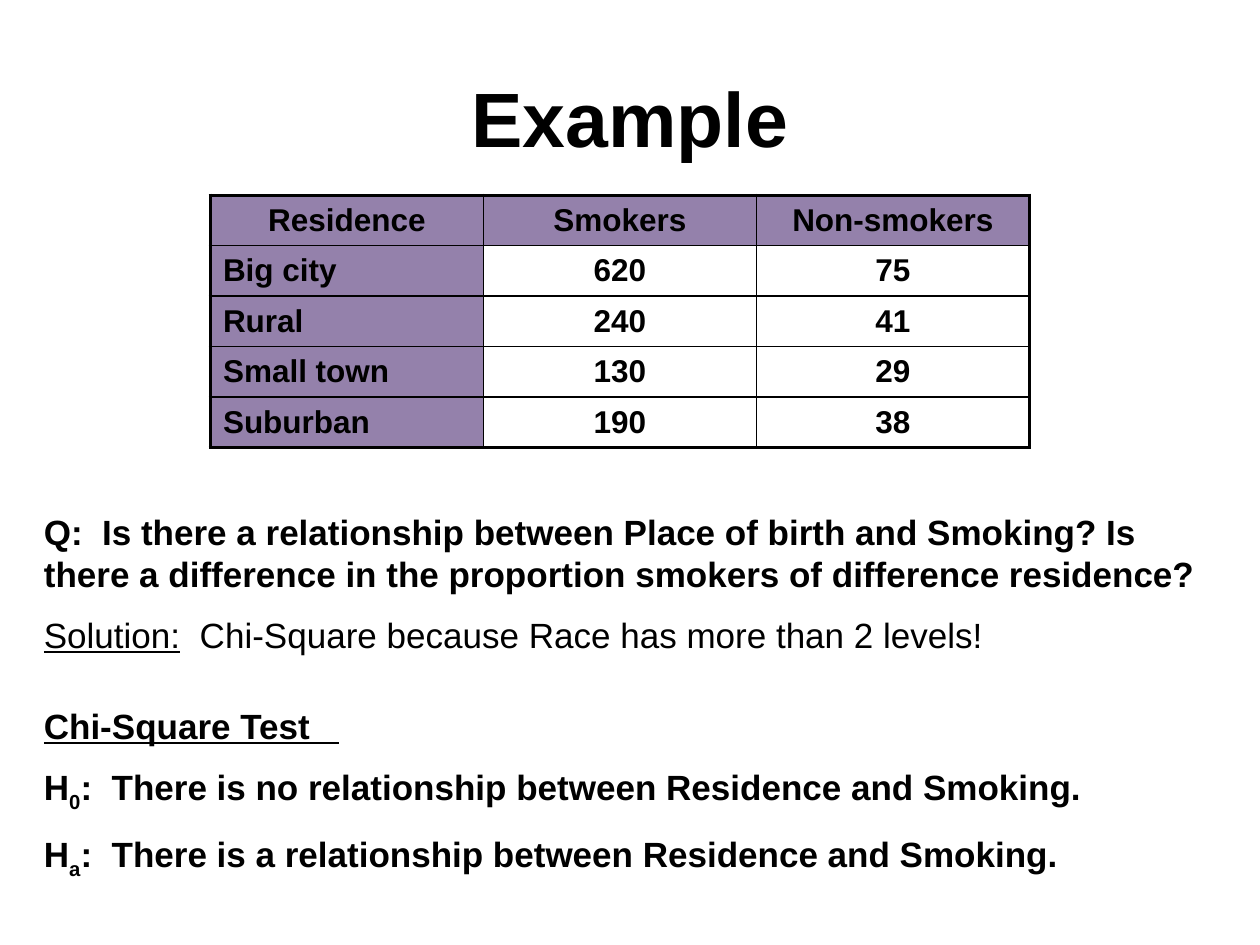
from pptx import Presentation, util as u
from pptx.dml import color
from pptx.enum import text as t
from pptx.oxml import ns
from lxml import etree

COLORS = {"ink": "000000", "header": "9481AB", "paper": "FFFFFF"}


def write(paragraph, text, size=20, bold=True, underline=False, subscript=False):
    run = paragraph.add_run()
    run.text = text
    font = run.font
    font.name = "Arial"
    font.size = u.Pt(size)
    font.bold = bold
    font.underline = underline
    font.color.rgb = color.RGBColor.from_string(COLORS["ink"])
    if subscript:
        run._r.get_or_add_rPr().set("baseline", "-25000")


def set_borders(cell, widths):
    properties = cell._tc.get_or_add_tcPr()
    for index, (side, width) in enumerate(widths.items()):
        line = etree.Element(ns.qn(f"a:ln{side}"), w=str(u.Pt(width)))
        fill = etree.SubElement(line, ns.qn("a:solidFill"))
        etree.SubElement(fill, ns.qn("a:srgbClr"), val=COLORS["ink"])
        properties.insert(index, line)


presentation = Presentation()
presentation.slide_width = u.Inches(10)
presentation.slide_height = u.Inches(7.5)
slide = presentation.slides.add_slide(presentation.slide_layouts[6])

rows = [
    ("Residence", "Smokers", "Non-smokers"),
    ("Big city", "620", "75"),
    ("Rural", "240", "41"),
    ("Small town", "130", "29"),
    ("Suburban", "190", "38"),
]
last_row, last_column = len(rows) - 1, len(rows[0]) - 1
table = slide.shapes.add_table(
    len(rows), len(rows[0]), u.Inches(1.67), u.Inches(1.55), u.Inches(6.5), u.Inches(2)
).table
for row_index, row in enumerate(rows):
    for column_index, value in enumerate(row):
        cell = table.cell(row_index, column_index)
        is_header = row_index == 0 or column_index == 0
        cell.fill.solid()
        cell.fill.fore_color.rgb = color.RGBColor.from_string(
            COLORS["header" if is_header else "paper"]
        )
        cell.vertical_anchor = t.MSO_ANCHOR.MIDDLE
        set_borders(cell, {
            "L": 2.25 if column_index == 0 else 1,
            "R": 2.25 if column_index == last_column else 1,
            "T": 2.25 if row_index == 0 else 1,
            "B": 2.25 if row_index == last_row else 1,
        })
        paragraph = cell.text_frame.paragraphs[0]
        is_label = column_index == 0 and row_index > 0
        paragraph.alignment = t.PP_ALIGN.LEFT if is_label else t.PP_ALIGN.CENTER
        write(paragraph, value, size=18)

body = slide.shapes.add_textbox(
    u.Inches(0.25), u.Inches(4), u.Inches(9.5), u.Inches(3.02)
).text_frame
body.word_wrap = True
body_paragraphs = [
    (0, [("Q:  Is there a relationship between Place of birth and Smoking? "
          "Is there a difference in the proportion smokers of difference residence?", {})]),
    (11, [("Solution:", {"bold": False, "underline": True}),
          ("  Chi-Square because Race has more than 2 levels!", {"bold": False})]),
    (28, [("Chi-Square Test   ", {"underline": True})]),
    (11, [("H", {}), ("0", {"subscript": True}),
          (":  There is no relationship between Residence and Smoking.", {})]),
    (11, [("H", {}), ("a", {"subscript": True}),
          (":  There is a relationship between Residence and Smoking.", {})]),
]
for index, (space_before, runs) in enumerate(body_paragraphs):
    paragraph = body.add_paragraph() if index else body.paragraphs[0]
    paragraph.space_before = u.Pt(space_before)
    for text, style in runs:
        write(paragraph, text, **style)

title = slide.shapes.add_textbox(
    u.Inches(0.5), u.Inches(0.3), u.Inches(9), u.Inches(1.25)
).text_frame
title.word_wrap = True
title.vertical_anchor = t.MSO_ANCHOR.MIDDLE
title.paragraphs[0].alignment = t.PP_ALIGN.CENTER
write(title.paragraphs[0], "Example", size=44)

presentation.save("out.pptx")
